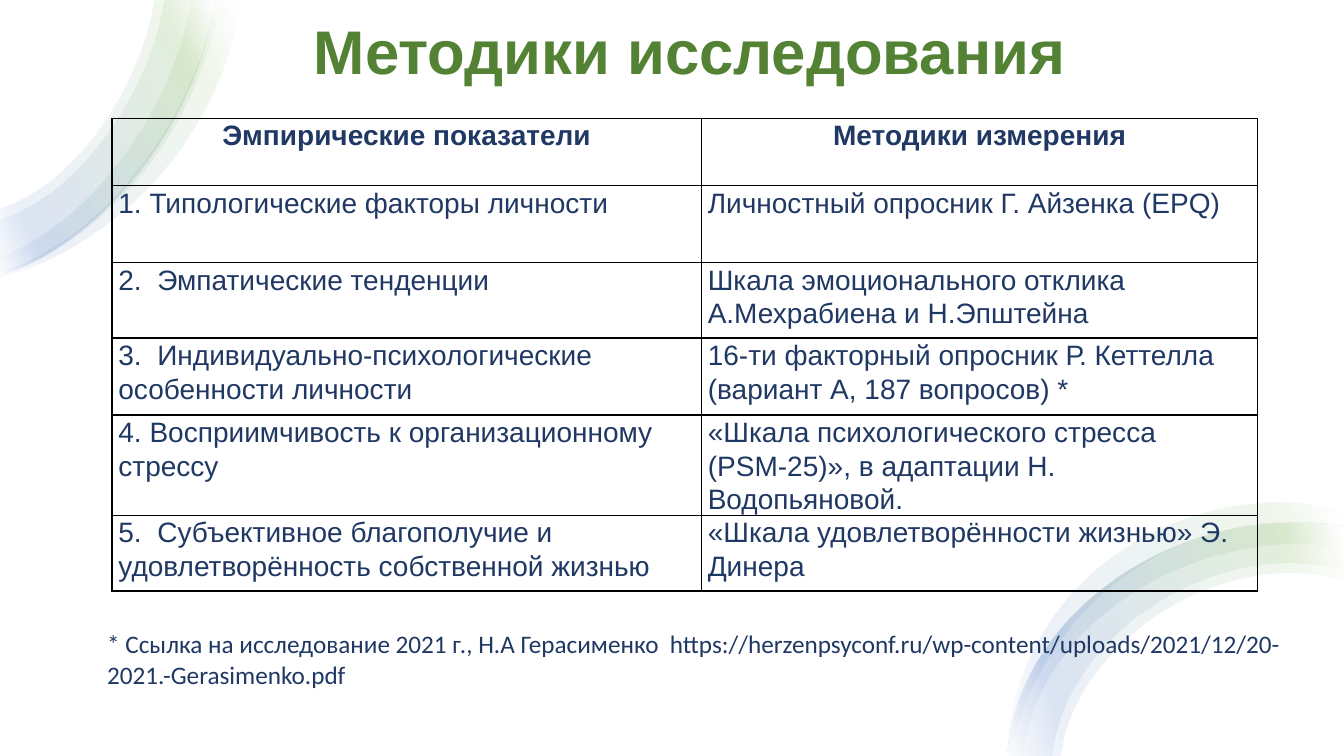
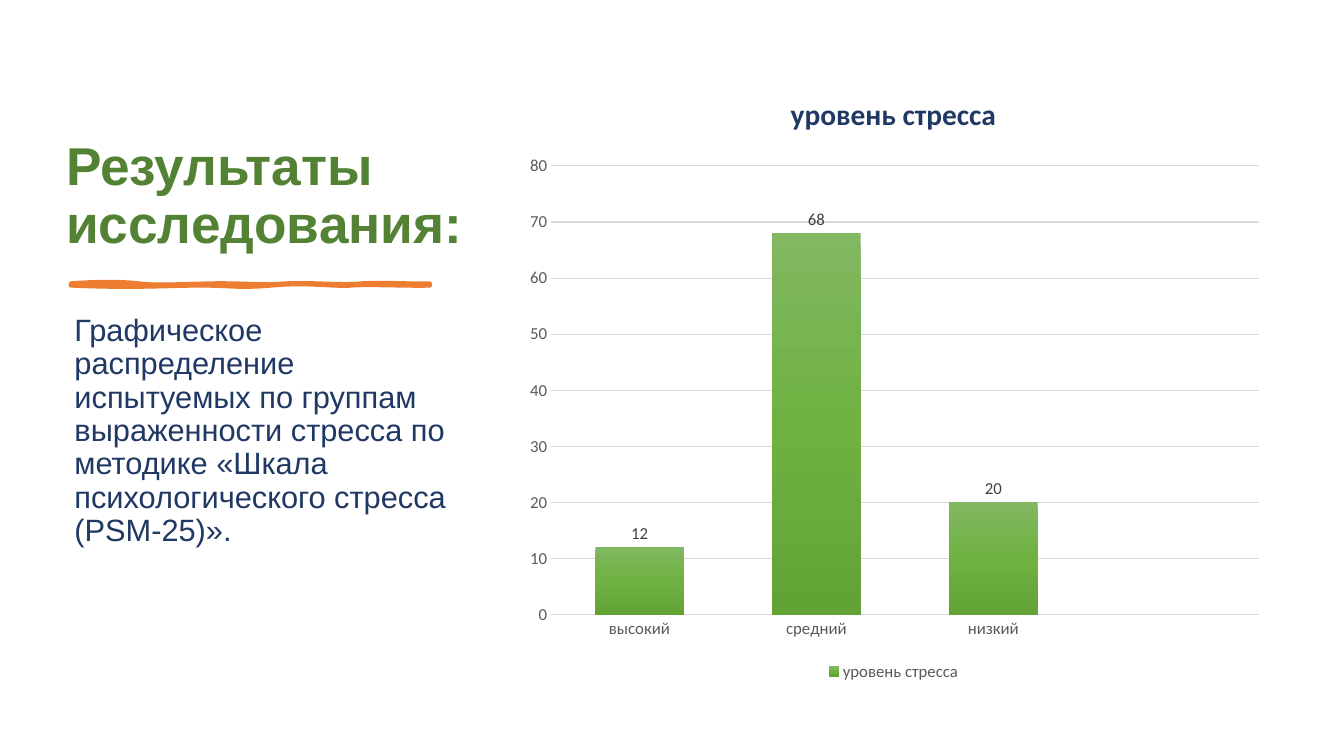
"""Build two slides on the methods and the results of a stress study."""
from dataclasses import dataclass
from typing import Any

from pptx import Presentation
from pptx.chart.data import CategoryChartData
from pptx.dml.color import RGBColor
from pptx.enum.chart import XL_CHART_TYPE as ChartType
from pptx.enum.chart import XL_LABEL_POSITION as LabelPosition
from pptx.enum.chart import XL_LEGEND_POSITION as LegendPosition
from pptx.enum.chart import XL_TICK_MARK as TickMark
from pptx.enum.shapes import MSO_SHAPE as ShapeType
from pptx.enum.text import MSO_ANCHOR as Anchor
from pptx.enum.text import MSO_AUTO_SIZE as AutoSize
from pptx.enum.text import PP_ALIGN as Align
from pptx.oxml import parse_xml
from pptx.oxml.ns import nsdecls, qn
from pptx.util import Pt

WHITE = RGBColor(0xFF, 0xFF, 0xFF)
BLACK = RGBColor(0x00, 0x00, 0x00)
GREEN = RGBColor(0x54, 0x82, 0x35)
NAVY = RGBColor(0x20, 0x38, 0x64)
ORANGE = RGBColor(0xED, 0x7D, 0x31)
LEAF = RGBColor(0x70, 0xAD, 0x47)
BLUE = RGBColor(0x44, 0x72, 0xC4)
GREY = RGBColor(0x59, 0x59, 0x59)
DARK_GREY = RGBColor(0x40, 0x40, 0x40)
PALE_GREY = RGBColor(0xD9, 0xD9, 0xD9)
BAR_TOP = RGBColor(0x81, 0xB8, 0x61)
BAR_MIDDLE = RGBColor(0x6F, 0xB2, 0x42)
BAR_BOTTOM = RGBColor(0x62, 0xA3, 0x36)

Curve = tuple[tuple[float, float], ...]
Stops = tuple[tuple[int, RGBColor], ...]

TITLE = {"name": "Arial", "bold": True}
BODY = {"name": "Arial", "size": Pt(22), "bold": False}
CELL = {"name": "Arial", "size": Pt(20), "bold": False}
NOTE = {"name": "Calibri", "size": Pt(18), "bold": False}
CHART_TITLE = {"name": "Calibri", "size": Pt(21), "bold": True}
CHART_TEXT = {"name": "Calibri", "size": Pt(12), "bold": False}
TIGHT = {"line_spacing": 0.9, "space_before": Pt(0), "space_after": Pt(6), "alignment": Align.LEFT}
PLAIN = {"space_before": Pt(0), "alignment": Align.LEFT}

RIBBON_STOPS: Stops = ((2, WHITE), (16, LEAF), (85, BLUE), (100, WHITE))
BAR_STOPS: Stops = ((0, BAR_TOP), (50, BAR_MIDDLE), (100, BAR_BOTTOM))


@dataclass(frozen=True)
class Box:
    """A rectangle in points."""

    left: float
    top: float
    width: float
    height: float

    def lengths(self) -> tuple[Pt, Pt, Pt, Pt]:
        """Return the four lengths for python-pptx."""
        return Pt(self.left), Pt(self.top), Pt(self.width), Pt(self.height)


@dataclass(frozen=True)
class Band:
    """An outline made of two edges, each a chain of cubic curves."""

    outer: Curve
    inner: Curve


PAGE = Box(0, 0, 960, 540)
LEFT_EDGE: Curve = ((0, 197), (74, 173), (142, 86), (153, 0))
RIGHT_EDGE: Curve = ((720, 540), (727, 441), (829, 373), (923, 373), (936, 373), (948, 374), (960, 376))
LEFT_RIBBON = (
    Band(((0, 198), (86, 174), (160, 94), (171, 0)), ((153, 0), (144, 68), (86, 166), (0, 194))),
    Band(LEFT_EDGE, ((110, 0), (101, 58), (58, 130), (0, 149))),
    Band(((0, 197), (77, 171), (144, 90), (156, 0)), ((136, 0), (126, 72), (68, 158), (0, 183))),
    Band(LEFT_EDGE, ((117, 0), (108, 61), (61, 137), (0, 157))),
)
RIGHT_RIBBON = (
    Band(RIGHT_EDGE, ((960, 415), (878, 389), (770, 454), (758, 540))),
    Band(RIGHT_EDGE, ((960, 408), (878, 382), (763, 446), (752, 540))),
    Band(RIGHT_EDGE, ((960, 392), (871, 372), (742, 435), (731, 540))),
    Band(((719, 540), (724, 436), (808, 361), (913, 359), (931, 359), (945, 362), (960, 366)),
         ((960, 377), (948, 374), (936, 373), (923, 373), (836, 373), (746, 430), (721, 540))),
)
BRUSH_STROKE = Band(
    ((50.5, 202.5), (70, 201), (87, 201), (99, 202.5), (111, 204), (127, 203), (150, 202.5),
     (174, 202), (187, 204), (204, 202.5), (222, 201.5), (244, 204), (258, 202.5),
     (273, 201.5), (297, 203), (307, 202.5)),
    ((307, 204), (294, 204.5), (262, 203), (251, 204), (239, 205), (219, 201.5), (194, 204),
     (169, 206), (166, 204), (143, 204), (120, 204), (96, 206), (50.5, 204)),
)

METHOD_ROWS = (
    ("Эмпирические показатели", "Методики измерения"),
    ("1. Типологические факторы личности", "Личностный опросник Г. Айзенка (EPQ)"),
    ("2.  Эмпатические тенденции", "Шкала эмоционального отклика А.Мехрабиена и Н.Эпштейна"),
    ("3.  Индивидуально-психологические особенности личности",
     "16-ти факторный опросник Р. Кеттелла (вариант А, 187 вопросов) *"),
    ("4. Восприимчивость к организационному стрессу",
     "«Шкала психологического стресса (PSM-25)», в адаптации Н. Водопьяновой."),
    ("5.  Субъективное благополучие и удовлетворённость собственной жизнью",
     "«Шкала удовлетворённости жизнью» Э. Динера"),
)
COLUMN_WIDTHS = (421, 397.5)
ROW_HEIGHTS = (48, 55, 54, 55, 55, 54)
STRESS_LEVELS = ("высокий", "средний", "низкий")
STRESS_VALUES = (12, 68, 20, None)


def apply_format(target: Any, values: dict[str, Any]) -> None:
    """Set each attribute of the target from the format values."""
    for name, value in values.items():
        setattr(target, name, value)


def style_font(font: Any, values: dict[str, Any], color: RGBColor) -> None:
    """Give a font its format values and colour."""
    apply_format(font, values)
    font.color.rgb = color


def write(frame: Any, text: str, layout: dict[str, Any], font: dict[str, Any], color: RGBColor) -> None:
    """Write one formatted paragraph into a text frame."""
    paragraph = frame.paragraphs[0]
    run = paragraph.add_run()
    run.text = text
    apply_format(paragraph, layout)
    style_font(run.font, font, color)


def fill_placeholder(shape: Any, box: Box, text: str, anchor: Anchor,
                     font: dict[str, Any], color: RGBColor) -> None:
    """Move a template placeholder and fill it with unbulleted text."""
    apply_format(shape, dict(zip(("left", "top", "width", "height"), box.lengths())))
    frame = shape.text_frame
    apply_format(frame, {"word_wrap": True, "auto_size": AutoSize.NONE, "vertical_anchor": anchor})
    properties = frame.paragraphs[0]._p.get_or_add_pPr()
    properties.set("marL", "0")
    properties.set("indent", "0")
    properties.append(parse_xml(f"<a:buNone {nsdecls('a')}/>"))
    write(frame, text, TIGHT, font, color)


def set_title(slide: Any, box: Box, text: str, size: float) -> None:
    """Fill the slide title in the shared title style."""
    fill_placeholder(slide.shapes.title, box, text, Anchor.BOTTOM, {**TITLE, "size": Pt(size)}, GREEN)


def apply_gradient(fill: Any, properties: Any, stops: Stops, angle: int, opacity: int = 100) -> None:
    """Replace a fill by a linear gradient, its angle clockwise in degrees."""
    fill.gradient()
    stop_xml = "".join(
        f'<a:gs pos="{position * 1000}"><a:srgbClr val="{color}">'
        f'<a:alpha val="{opacity * 1000}"/></a:srgbClr></a:gs>'
        for position, color in stops
    )
    gradient = parse_xml(
        f'<a:gradFill {nsdecls("a")} rotWithShape="1"><a:gsLst>{stop_xml}</a:gsLst>'
        f'<a:lin ang="{angle * 60000}" scaled="0"/></a:gradFill>'
    )
    properties.replace(properties.find(qn("a:gradFill")), gradient)


def add_backdrop(slide: Any) -> None:
    """Put a white page behind everything else."""
    shape = slide.shapes.add_shape(ShapeType.RECTANGLE, *PAGE.lengths())
    shape.shadow.inherit = False
    shape.fill.solid()
    shape.fill.fore_color.rgb = WHITE
    shape.line.fill.background()
    slide.shapes.title._element.addprevious(shape._element)


def add_band(slide: Any, band: Band) -> Any:
    """Draw the closed outline of a band with cubic curves."""
    first, *others = [(Pt(x), Pt(y)) for x, y in band.outer + band.inner]
    builder = slide.shapes.build_freeform(*first)
    builder.add_line_segments(others, close=True)
    shape = builder.convert_to_shape()
    shape.shadow.inherit = False
    outline = next(shape._element.iter(qn("a:path")))
    segments = outline.findall(qn("a:lnTo"))
    del segments[len(band.outer) - 1]
    for start in range(0, len(segments), 3):
        curve = parse_xml(f"<a:cubicBezTo {nsdecls('a')}/>")
        segments[start].addprevious(curve)
        for segment in segments[start:start + 3]:
            curve.append(segment[0])
            outline.remove(segment)
    return shape


def add_ribbon(slide: Any, bands: tuple[Band, ...], angle: int) -> None:
    """Draw overlapping translucent bands."""
    for band in bands:
        shape = add_band(slide, band)
        apply_gradient(shape.fill, shape._element.spPr, RIBBON_STOPS, angle, opacity=10)
        shape.line.fill.background()


def add_borders(cell: Any) -> None:
    """Put a thin line on each side of a table cell."""
    properties = cell._tc.get_or_add_tcPr()
    for index, side in enumerate(("lnL", "lnR", "lnT", "lnB")):
        properties.insert(index, parse_xml(
            f'<a:{side} {nsdecls("a")} w="{Pt(1)}"><a:solidFill>'
            f'<a:srgbClr val="{BLACK}"/></a:solidFill></a:{side}>'
        ))


def add_method_table(slide: Any) -> None:
    """Draw the table of indicators and methods."""
    box = Box(80, 84.5, sum(COLUMN_WIDTHS), sum(ROW_HEIGHTS))
    table = slide.shapes.add_table(len(METHOD_ROWS), len(COLUMN_WIDTHS), *box.lengths()).table
    apply_format(table, {"first_row": False, "horz_banding": False})
    for column, width in zip(table.columns, COLUMN_WIDTHS):
        column.width = Pt(width)
    for index, (row, height, texts) in enumerate(zip(table.rows, ROW_HEIGHTS, METHOD_ROWS)):
        row.height = Pt(height)
        is_header = index == 0
        layout = {"line_spacing": 1.07, "alignment": Align.CENTER if is_header else Align.LEFT}
        for cell, text in zip(row.cells, texts):
            apply_format(cell, {"margin_left": Pt(4.6), "margin_right": Pt(4.6),
                                "margin_top": Pt(0), "margin_bottom": Pt(0)})
            cell.fill.background()
            add_borders(cell)
            write(cell.text_frame, text, layout, {**CELL, "bold": is_header}, NAVY)


def place_plot(chart: Any, sizes: dict[str, float]) -> None:
    """Fix the inner plot area as fractions of the chart."""
    area = chart._chartSpace.chart.plotArea
    for layout in area.findall(qn("c:layout")):
        area.remove(layout)
    modes = '<c:xMode val="edge"/><c:yMode val="edge"/>'
    values = "".join(f'<c:{name} val="{value}"/>' for name, value in sizes.items())
    area.insert(0, parse_xml(
        f'<c:layout {nsdecls("c")}><c:manualLayout><c:layoutTarget val="inner"/>'
        f"{modes}{values}</c:manualLayout></c:layout>"
    ))


def add_stress_chart(slide: Any, box: Box) -> None:
    """Draw the column chart of stress levels."""
    data = CategoryChartData()
    data.categories = STRESS_LEVELS
    data.add_series("уровень стресса", STRESS_VALUES)
    chart = slide.shapes.add_chart(ChartType.COLUMN_CLUSTERED, *box.lengths(), data).chart
    style_font(chart.font, CHART_TEXT, GREY)
    chart.has_title = True
    chart.chart_title.include_in_layout = False
    write(chart.chart_title.text_frame, "уровень стресса", {}, CHART_TITLE, NAVY)
    chart.has_legend = True
    apply_format(chart.legend, {"position": LegendPosition.BOTTOM, "include_in_layout": False})
    style_font(chart.legend.font, CHART_TEXT, GREY)
    place_plot(chart, {"x": 0.05, "y": 0.155, "w": 0.93, "h": 0.73})

    plot = chart.plots[0]
    apply_format(plot, {"gap_width": 100, "overlap": -24, "vary_by_categories": False,
                        "has_data_labels": True})
    apply_format(plot.data_labels, {"show_value": True, "position": LabelPosition.OUTSIDE_END})
    style_font(plot.data_labels.font, CHART_TEXT, DARK_GREY)
    series = plot.series[0]
    apply_gradient(series.format.fill, series._element.spPr, BAR_STOPS, 90)

    for axis in (chart.category_axis, chart.value_axis):
        apply_format(axis, {"major_tick_mark": TickMark.NONE, "minor_tick_mark": TickMark.NONE})
        style_font(axis.tick_labels.font, CHART_TEXT, GREY)
    apply_format(chart.value_axis, {"minimum_scale": 0, "maximum_scale": 80, "major_unit": 10})
    chart.value_axis.format.line.fill.background()
    for line, width in ((chart.category_axis.format.line, 1),
                        (chart.value_axis.major_gridlines.format.line, 0.75)):
        line.color.rgb = PALE_GREY
        line.width = Pt(width)


def build_methods_slide(presentation: Any) -> None:
    """Build the slide with the table of methods."""
    slide = presentation.slides.add_slide(presentation.slide_layouts[5])
    add_backdrop(slide)
    set_title(slide, Box(217, 18, 615, 48), "Методики исследования", 44)
    add_ribbon(slide, LEFT_RIBBON, 155)
    add_ribbon(slide, RIGHT_RIBBON, 165)
    add_method_table(slide)
    note = slide.shapes.add_textbox(*Box(69.5, 445.5, 859, 51).lengths())
    note.text_frame.word_wrap = True
    write(note.text_frame, "* Ссылка на исследование 2021 г., Н.А Герасименко  "
          "https://herzenpsyconf.ru/wp-content/uploads/2021/12/20-2021.-Gerasimenko.pdf",
          PLAIN, NOTE, NAVY)


def build_results_slide(presentation: Any) -> None:
    """Build the slide with the chart of results."""
    slide = presentation.slides.add_slide(presentation.slide_layouts[1])
    set_title(slide, Box(40, 50, 307, 135.5), "Результаты исследования:", 38)
    stroke = add_band(slide, BRUSH_STROKE)
    stroke.fill.solid()
    for color in (stroke.fill.fore_color, stroke.line.color):
        color.rgb = ORANGE
    stroke.line.width = Pt(3)
    fill_placeholder(slide.placeholders[1], Box(46, 221.5, 285, 269),
                     "Графическое распределение испытуемых по группам выраженности стресса "
                     "по методике «Шкала психологического стресса (PSM-25)».",
                     Anchor.TOP, BODY, NAVY)
    add_stress_chart(slide, Box(366.5, 50.5, 543.5, 439))


def main() -> None:
    """Build and save the presentation."""
    presentation = Presentation()
    apply_format(presentation, {"slide_width": Pt(PAGE.width), "slide_height": Pt(PAGE.height)})
    build_methods_slide(presentation)
    build_results_slide(presentation)
    presentation.save("out.pptx")


if __name__ == "__main__":
    main()
